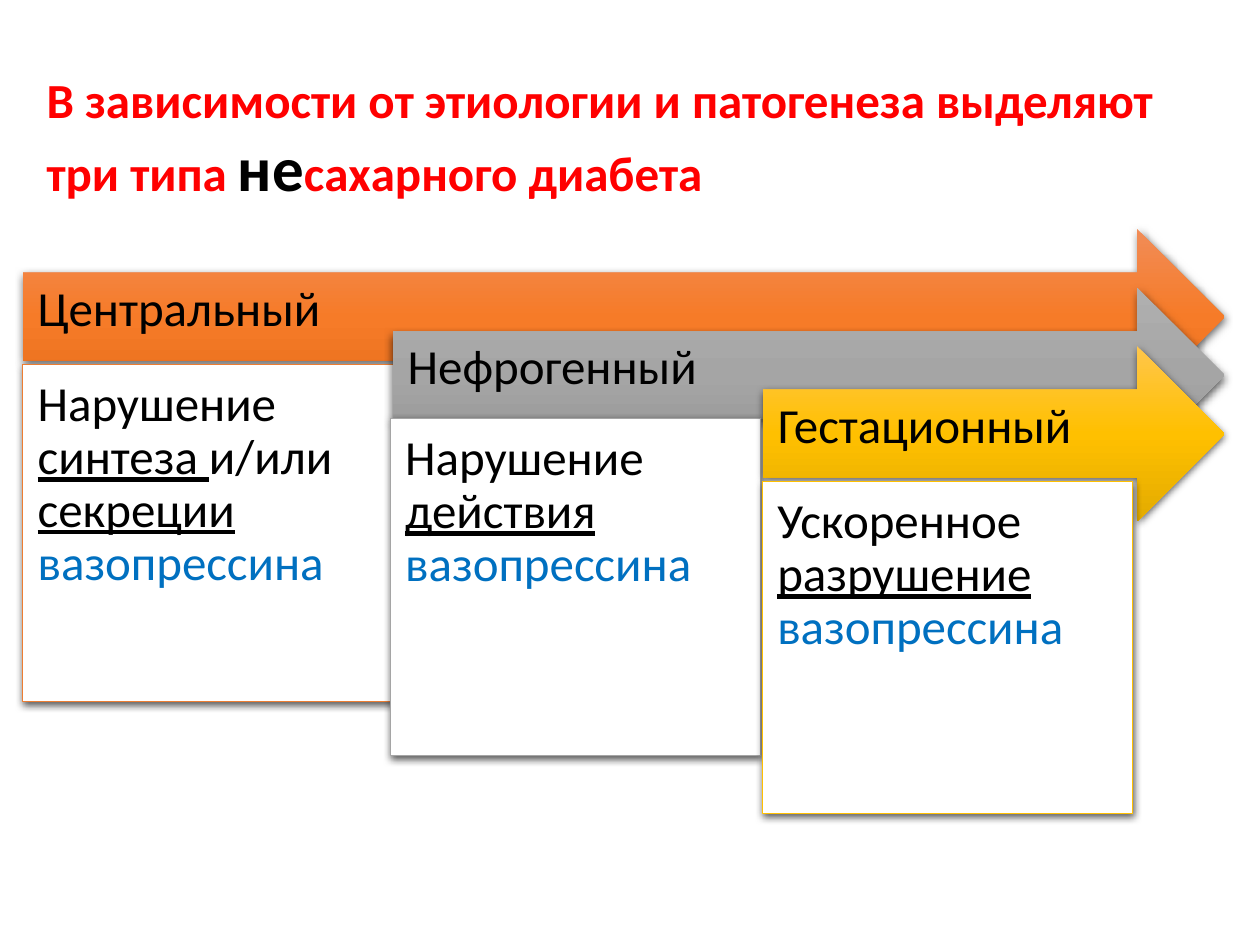
import dataclasses

import lxml.etree
import pptx
import pptx.dml.color
import pptx.enum.shapes
import pptx.enum.text
import pptx.oxml.ns
import pptx.util

Cm = pptx.util.Cm
Pt = pptx.util.Pt
qn = pptx.oxml.ns.qn
Shape = pptx.enum.shapes.MSO_SHAPE
Anchor = pptx.enum.text.MSO_ANCHOR
Align = pptx.enum.text.PP_ALIGN


@dataclasses.dataclass(frozen=True)
class Theme:
    font: str = "Calibri"
    body_size: int = 28
    emphasis_size: int = 36
    text: str = "000000"
    title: str = "FF0000"
    hormone: str = "0070C0"
    paper: str = "FFFFFF"
    shadow: str = "000000"
    orange: tuple = ("F18C57", "F67B28", "E56C19")
    gray: tuple = ("AFAFAF", "A5A5A5", "939393")
    gold: tuple = ("FFC64B", "FFC000", "E3AB00")
    borders: tuple = ("ED7D31", "A5A5A5", "FFC000")


THEME = Theme()


def rgb(color):
    return pptx.dml.color.RGBColor.from_string(color)


def add_run(paragraph, text, size=THEME.body_size, color=THEME.text,
            bold=False, underline=False):
    run = paragraph.add_run()
    run.text = text
    run.font.name = THEME.font
    run.font.size = Pt(size)
    run.font.bold = bold
    run.font.underline = underline
    run.font.color.rgb = rgb(color)


def add_color(parent, color):
    return lxml.etree.SubElement(parent, qn("a:srgbClr"), val=color)


class SlideBuilder:
    def __init__(self, slide, theme):
        self.slide = slide
        self.theme = theme

    def place(self, shape, left, top, width, height):
        shape.left, shape.top = Cm(left), Cm(top)
        shape.width, shape.height = Cm(width), Cm(height)

    def set_text(self, shape, runs, anchor, insets, line_spacing):
        """Fill a shape with one paragraph; insets run left, top, right, bottom."""
        frame = shape.text_frame
        frame.word_wrap = True
        frame.auto_size = pptx.enum.text.MSO_AUTO_SIZE.NONE
        frame.vertical_anchor = anchor
        (frame.margin_left, frame.margin_top,
         frame.margin_right, frame.margin_bottom) = map(Cm, insets)
        paragraph = frame.paragraphs[0]
        paragraph.alignment = Align.LEFT
        paragraph.line_spacing = line_spacing
        paragraph.space_before = Pt(0)
        for text, style in runs:
            add_run(paragraph, text, **style)

    def add_title(self, runs, *bounds):
        title = self.slide.shapes.title
        self.place(title, *bounds)
        self.set_text(title, runs, Anchor.TOP, (0.25, 0.13, 0.25, 0.13), 1.0)

    def add_shadow(self, shape):
        shape.shadow.inherit = False
        effects = shape._element.spPr.find(qn("a:effectLst"))
        shadow = lxml.etree.SubElement(
            effects, qn("a:outerShdw"), blurRad=str(Pt(4.5)), dist=str(Pt(1.5)),
            dir="5400000", algn="ctr", rotWithShape="0")
        color = add_color(shadow, self.theme.shadow)
        lxml.etree.SubElement(color, qn("a:alpha"), val="63000")

    def add_arrow(self, label, colors, *bounds):
        arrow = self.slide.shapes.add_shape(Shape.RIGHT_ARROW, *map(Cm, bounds))
        arrow.fill.gradient()
        arrow.fill.gradient_angle = 270
        stops = arrow._element.spPr.find(".//" + qn("a:gsLst"))
        for stop in list(stops):
            stops.remove(stop)
        for position, color in zip((0, 50000, 100000), colors):
            add_color(lxml.etree.SubElement(stops, qn("a:gs"), pos=str(position)), color)
        arrow.line.fill.background()
        self.add_shadow(arrow)
        self.set_text(arrow, [(label, {})], Anchor.MIDDLE, (0.3, 0.3, 0.71, 0.56), 0.9)

    def add_box(self, runs, border, *bounds):
        box = self.slide.shapes.add_shape(Shape.RECTANGLE, *map(Cm, bounds))
        box.fill.solid()
        box.fill.fore_color.rgb = rgb(self.theme.paper)
        box.line.color.rgb = rgb(border)
        box.line.width = Pt(0.5)
        self.add_shadow(box)
        self.set_text(box, runs, Anchor.TOP, (0.3,) * 4, 0.9)


def main():
    presentation = pptx.Presentation()
    presentation.slide_width, presentation.slide_height = Cm(25.4), Cm(19.05)
    slide = presentation.slides.add_slide(presentation.slide_layouts[5])
    builder = SlideBuilder(slide, THEME)

    heading = {"color": THEME.title, "bold": True}
    underlined = {"underline": True}
    hormone = ("вазопрессина", {"color": THEME.hormone})
    diabetes_types = [
        ("Центральный", THEME.orange, (0.46, 7.34, 7.47, 6.81),
         [("Нарушение ", {}), ("синтеза ", underlined), ("и/или ", {}),
          ("секреции ", underlined), hormone]),
        ("Нефрогенный", THEME.gray, (7.87, 8.43, 7.47, 6.81),
         [("Нарушение ", {}), ("действия ", underlined), hormone]),
        ("Гестационный", THEME.gold, (15.37, 9.7, 7.47, 6.71),
         [("Ускоренное ", {}), ("разрушение", underlined), (" ", {}), hormone]),
    ]
    arrow_left, arrow_top, arrow_height = 0.46, 4.62, 3.53
    column_step, row_step, arrow_tip = 7.46, 1.18, 24.69
    for index, (label, colors, box_bounds, mechanism) in enumerate(diabetes_types):
        left = arrow_left + index * column_step
        builder.add_arrow(label, colors, left, arrow_top + index * row_step,
                          arrow_tip - left, arrow_height)
        builder.add_box(mechanism, THEME.borders[index], *box_bounds)

    builder.add_title(
        [("В зависимости от этиологии и патогенеза выделяют три типа ", heading),
         ("не", {"size": THEME.emphasis_size, "bold": True}),
         ("сахарного диабета", heading)],
        0.69, 1.27, 23.75, 3)
    presentation.save("out.pptx")


if __name__ == "__main__":
    main()
